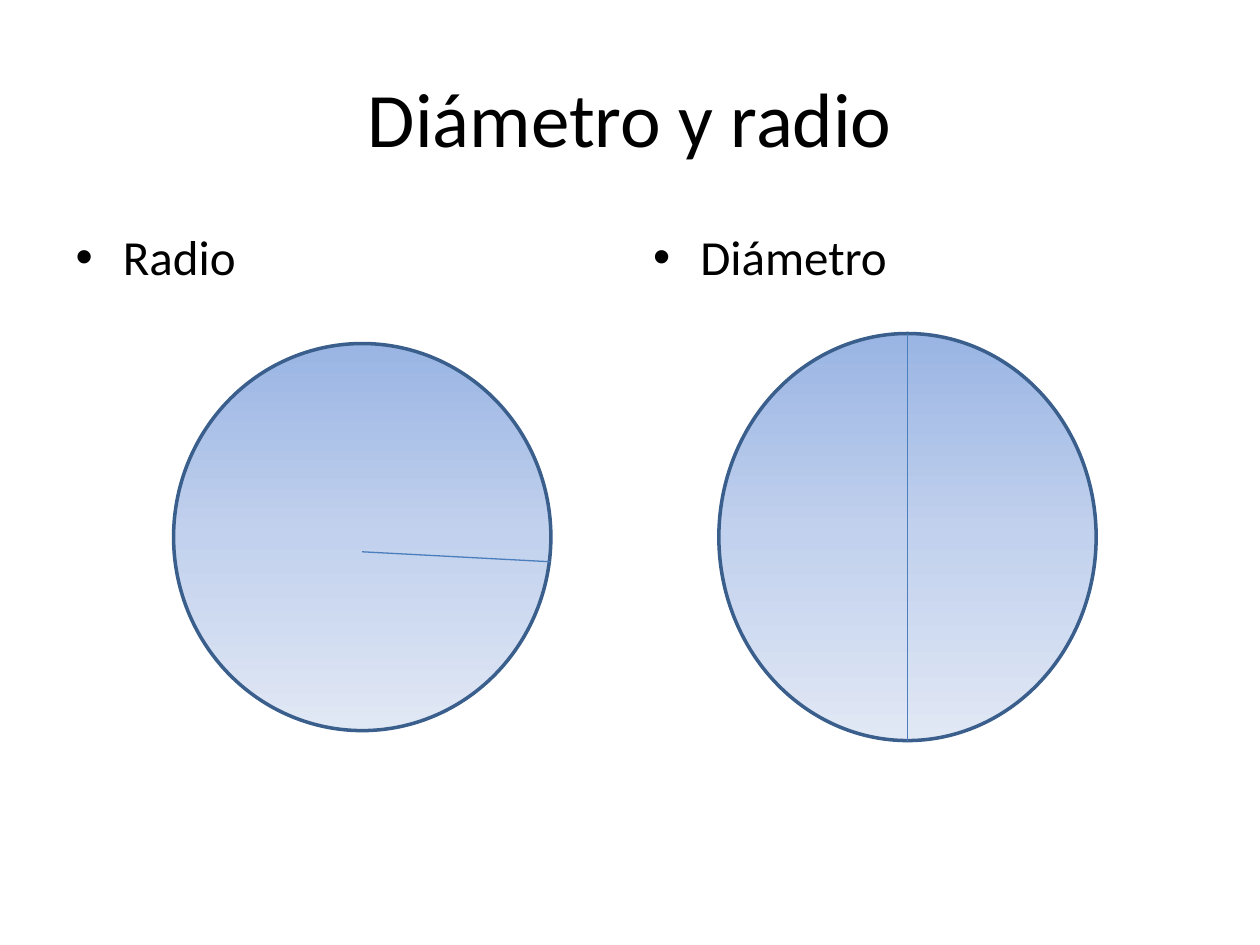
from copy import deepcopy

from lxml import etree
from pptx import Presentation
from pptx.dml.color import RGBColor
from pptx.enum.shapes import MSO_CONNECTOR, MSO_SHAPE
from pptx.enum.text import MSO_ANCHOR, PP_ALIGN
from pptx.oxml.ns import qn
from pptx.util import Pt

ELLIPSE = MSO_SHAPE.OVAL
STRAIGHT = MSO_CONNECTOR.STRAIGHT
CENTER, LEFT = PP_ALIGN.CENTER, PP_ALIGN.LEFT
MIDDLE, TOP = MSO_ANCHOR.MIDDLE, MSO_ANCHOR.TOP
TWO_CONTENT = 3

COLORS = {
    "text": "000000",
    "outline": "3A5F8C",
    "segment": "4B7EBC",
    "top": "9AB5E4",
    "middle": "C2D1ED",
    "bottom": "E1E8F5",
}
GRADIENT = [(0, "top"), (0.5, "middle"), (1, "bottom")]


class CircleSlide:
    """Holds the style and the current slide of the circle lesson."""

    font = "Calibri"

    def __init__(self, deck):
        self.slide = deck.slides.add_slide(deck.slide_layouts[TWO_CONTENT])

    def color(self, name):
        return RGBColor.from_string(COLORS[name])

    def heading(self, index, text, box, size, align, anchor):
        holder = self.slide.placeholders[index]
        holder.left, holder.top, holder.width, holder.height = map(Pt, box)
        frame = holder.text_frame
        frame.text = text
        frame.vertical_anchor = anchor
        paragraph = frame.paragraphs[0]
        paragraph.alignment = align
        font = paragraph.runs[0].font
        font.name, font.size = self.font, Pt(size)
        font.color.rgb = self.color("text")

    def circle(self, left, top, width, height):
        disc = self.slide.shapes.add_shape(ELLIPSE, *map(Pt, (left, top, width, height)))
        disc.shadow.inherit = False
        disc.fill.gradient()
        disc.fill.gradient_angle = 270
        first_stop = disc._element.spPr.find(".//" + qn("a:gs"))
        first_stop.addnext(deepcopy(first_stop))
        for stop, (position, name) in zip(disc.fill.gradient_stops, GRADIENT):
            stop.position = position
            stop.color.rgb = self.color(name)
        disc.line.color.rgb = self.color("outline")
        disc.line.width = Pt(2)

    def segment(self, start, end):
        line = self.slide.shapes.add_connector(STRAIGHT, *map(Pt, (*start, *end)))
        line.line.color.rgb = self.color("segment")
        line.line.width = Pt(0.75)
        etree.SubElement(line._element.spPr, qn("a:effectLst"))


def main():
    deck = Presentation()
    deck.slide_width, deck.slide_height = Pt(720), Pt(540)
    lesson = CircleSlide(deck)

    lesson.heading(0, "Diámetro y radio", (36, 21.6, 648, 90), 44, CENTER, MIDDLE)
    for index, label, left in [(1, "Radio", 36), (2, "Diámetro", 366)]:
        lesson.heading(index, label, (left, 126, 318, 356.4), 28, LEFT, TOP)

    diameter_x, diameter_top, diameter_bottom = 518.6, 190.6, 423.2
    circle_width = 215.6
    lesson.circle(99.2, 196.3, circle_width, 221.2)
    lesson.segment((206.9, 315.3), (314.4, 321))
    lesson.circle(diameter_x - circle_width / 2, diameter_top,
                  circle_width, diameter_bottom - diameter_top)
    lesson.segment((diameter_x, diameter_top), (diameter_x, diameter_bottom))

    deck.save("out.pptx")


if __name__ == "__main__":
    main()
